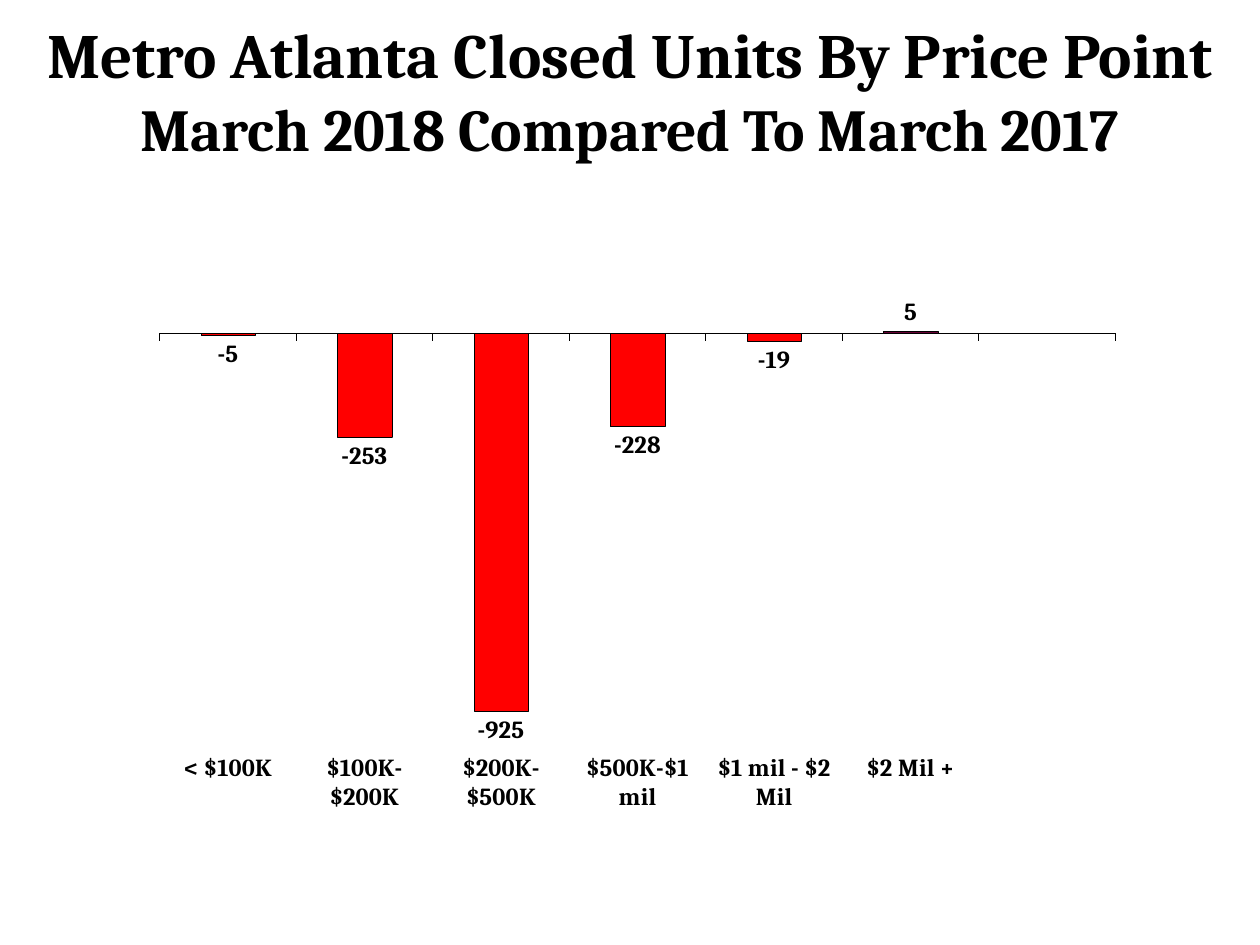
"""Build a slide charting the change in Metro Atlanta closed units by price point."""
import pptx
import pptx.chart.data
import pptx.dml.color
import pptx.enum.chart
import pptx.enum.text
import pptx.oxml
import pptx.oxml.ns
import pptx.util
from pptx.util import Inches

COLORS = {"text": "000000", "outline": "000000", "decline": "FF0000", "growth": "660033"}
FONT = "Cambria"
CHANGES = {
    "< $100K": -5,
    "$100K-$200K": -253,
    "$200K-$500K": -925,
    "$500K-$1 mil": -228,
    "$1 mil - $2 Mil": -19,
    "$2 Mil +": 5,
    "": None,
}
PLOT_AREA = {"x": 0.068, "y": 0.066, "w": 0.878, "h": 0.713}


def color(name):
    return pptx.dml.color.RGBColor.from_string(COLORS[name])


def style_font(font, size):
    font.name = FONT
    font.size = pptx.util.Pt(size)
    font.bold = True
    font.color.rgb = color("text")


def add_heading(slide, lines):
    heading = slide.shapes.add_textbox(Inches(0), Inches(0.5), Inches(10), Inches(0.42))
    frame = heading.text_frame
    frame.word_wrap = True
    frame.vertical_anchor = pptx.enum.text.MSO_ANCHOR.MIDDLE
    paragraph = frame.paragraphs[0]
    paragraph.alignment = pptx.enum.text.PP_ALIGN.CENTER
    for index, (words, size) in enumerate(lines):
        if index:
            paragraph.add_line_break()
        run = paragraph.add_run()
        run.text = words
        style_font(run.font, size)


def place_plot(chart):
    plot_area = chart._chartSpace.chart.plotArea
    for layout in plot_area.findall(pptx.oxml.ns.qn("c:layout")):
        plot_area.remove(layout)
    sizes = "".join(f'<c:{side} val="{share}"/>' for side, share in PLOT_AREA.items())
    plot_area.insert(0, pptx.oxml.parse_xml(
        f'<c:layout {pptx.oxml.ns.nsdecls("c")}><c:manualLayout>'
        '<c:layoutTarget val="inner"/><c:xMode val="edge"/><c:yMode val="edge"/>'
        f"{sizes}</c:manualLayout></c:layout>"))


def style_axes(chart):
    price_axis, units_axis = chart.category_axis, chart.value_axis
    price_axis.tick_label_position = pptx.enum.chart.XL_TICK_LABEL_POSITION.LOW
    price_axis.major_tick_mark = pptx.enum.chart.XL_TICK_MARK.OUTSIDE
    price_axis.format.line.color.rgb = color("outline")
    price_axis.format.line.width = pptx.util.Pt(0.01)
    units_axis.minimum_scale = -1000
    units_axis.maximum_scale = 200
    units_axis.has_major_gridlines = False
    units_axis.visible = False


def style_bars(plot):
    plot.gap_width = 150
    plot.vary_by_categories = False
    bars = plot.series[0]
    bars.invert_if_negative = False
    growth_bar = bars.points[list(CHANGES).index("$2 Mil +")]
    for part, fill in ((bars, "decline"), (growth_bar, "growth")):
        part.format.fill.solid()
        part.format.fill.fore_color.rgb = color(fill)
        part.format.line.color.rgb = color("outline")
        part.format.line.width = pptx.util.Pt(0.06)
    labels = bars.data_labels
    labels.show_value = True
    labels.number_format = "0"
    labels.number_format_is_linked = False
    labels.position = pptx.enum.chart.XL_LABEL_POSITION.OUTSIDE_END
    style_font(labels.font, 14)


def add_units_chart(slide):
    units = pptx.chart.data.CategoryChartData(number_format="0")
    units.categories = list(CHANGES)
    units.add_series("Series 1", list(CHANGES.values()))
    chart = slide.shapes.add_chart(
        pptx.enum.chart.XL_CHART_TYPE.COLUMN_CLUSTERED,
        Inches(0.68), Inches(1.64), Inches(8.64), Inches(5.45), units).chart
    chart.has_legend = False
    chart.has_title = False
    style_font(chart.font, 14)
    place_plot(chart)
    style_axes(chart)
    style_bars(chart.plots[0])


def main():
    deck = pptx.Presentation()
    deck.slide_width, deck.slide_height = Inches(10), Inches(7.5)
    slide = deck.slides.add_slide(deck.slide_layouts[6])
    add_heading(slide, [
        ("Metro Atlanta Closed Units By Price Point", 36),
        ("March 2018 Compared To March 2017", 34),
    ])
    add_units_chart(slide)
    deck.save("out.pptx")


if __name__ == "__main__":
    main()
